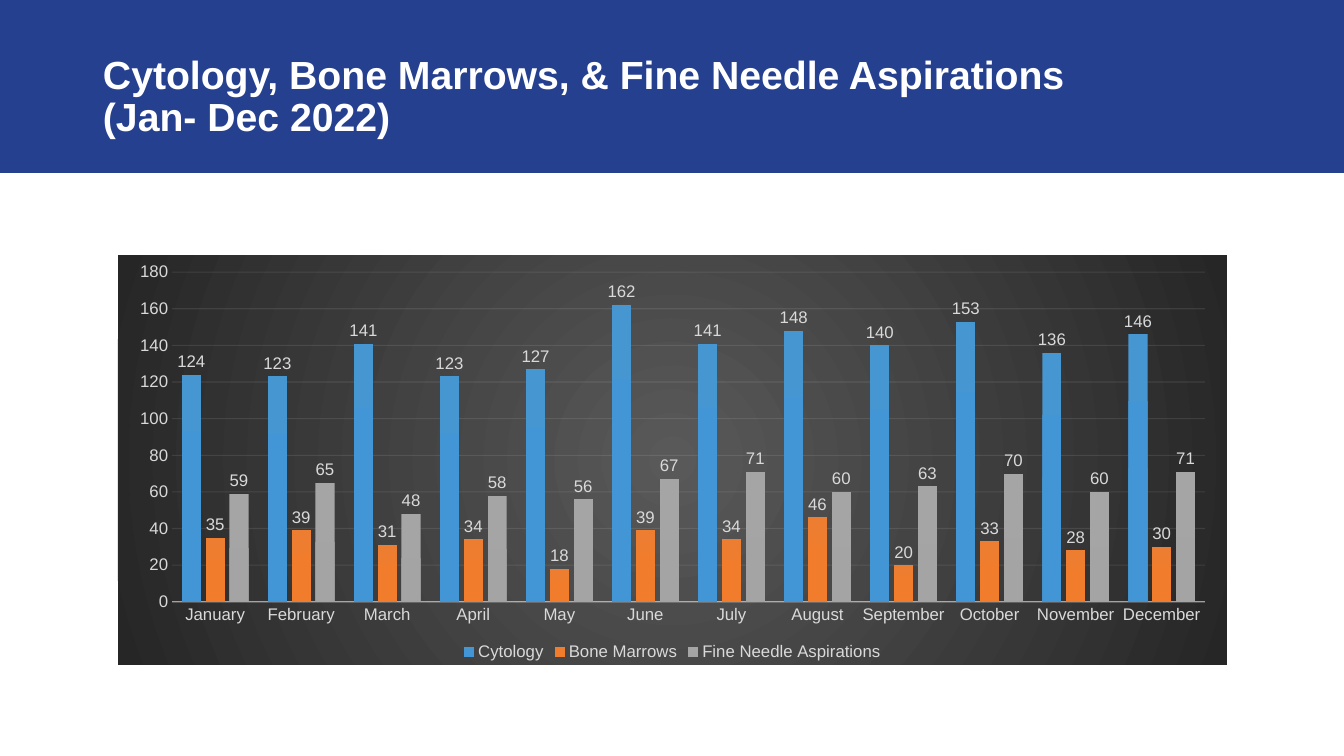
"""Build the 2022 cytology, bone marrow and aspiration volume slide."""
from lxml import etree
from pptx import Presentation
from pptx.chart.data import CategoryChartData
from pptx.dml.color import RGBColor
from pptx.enum.chart import XL_CHART_TYPE, XL_LABEL_POSITION, XL_LEGEND_POSITION, XL_TICK_MARK
from pptx.enum.shapes import MSO_SHAPE
from pptx.enum.text import MSO_ANCHOR, MSO_AUTO_SIZE, PP_ALIGN
from pptx.oxml import parse_xml
from pptx.oxml.ns import nsdecls, qn
from pptx.util import Emu, Pt

COLUMNS = XL_CHART_TYPE.COLUMN_CLUSTERED
OUTSIDE_END = XL_LABEL_POSITION.OUTSIDE_END
BOTTOM = XL_LEGEND_POSITION.BOTTOM
NO_TICK = XL_TICK_MARK.NONE
RECTANGLE = MSO_SHAPE.RECTANGLE
MIDDLE = MSO_ANCHOR.MIDDLE
NO_AUTOFIT = MSO_AUTO_SIZE.NONE
LEFT = PP_ALIGN.LEFT

FONT = "Arial"
WHITE, NAVY, PALE, LABEL = "FFFFFF", "25408F", "F2F2F2", "D9D9D9"
TITLE_LINES = ["Cytology, Bone Marrows, & Fine Needle Aspirations", "(Jan- Dec 2022)"]
MONTHS = ["January", "February", "March", "April", "May", "June", "July",
          "August", "September", "October", "November", "December"]
PROCEDURES = [
    ("Cytology", [124, 123, 141, 123, 127, 162, 141, 148, 140, 153, 136, 146],
     ["4696D2", "4296D5", "4295D4"]),
    ("Bone Marrows", [35, 39, 31, 34, 18, 39, 34, 46, 20, 33, 28, 30],
     ["ED7D31", "F17C2C", "F07B2C"]),
    ("Fine Needle Aspirations", [59, 65, 48, 58, 56, 67, 71, 60, 63, 70, 60, 71],
     ["A5A5A5", "A4A4A4", "A4A4A4"]),
]
BACKDROP = ["595959", "262626"]
DOWNWARD = '<a:lin ang="5400000" scaled="0"/>'
RADIAL = '<a:path path="circle"><a:fillToRect l="50000" t="50000" r="50000" b="50000"/></a:path>'

SLIDE_SIZE = (1344, 756)
BAND_BOX = (0, 0, 1344, 173)
TITLE_BOX = (93, 46, 1159, 146)
TITLE_INSETS = (10, 5, 10, 47)
CHART_BOX = (118, 255, 1109, 410)


def px(*lengths):
    return [Emu(round(length * 914400 / 100.8)) for length in lengths]


def color(value):
    return RGBColor.from_string(value)


def style_font(font, size, value, bold=False):
    font.name, font.size, font.bold = FONT, Pt(size), bold
    font.color.rgb = color(value)


def gradient(stops, direction):
    step = 100000 // (len(stops) - 1)
    marks = "".join(f'<a:gs pos="{i * step}"><a:srgbClr val="{stop}"/></a:gs>'
                    for i, stop in enumerate(stops))
    return parse_xml(f'<a:gradFill {nsdecls("a")} rotWithShape="1">'
                     f'<a:gsLst>{marks}</a:gsLst>{direction}</a:gradFill>')


def style_line(line, width, value, opacity):
    line.width = Pt(width)
    line.color.rgb = color(value)
    tint = line.fill._xPr.find(f".//{qn('a:srgbClr')}")
    etree.SubElement(tint, qn("a:alpha")).set("val", str(opacity * 1000))


def add_band(slide):
    band = slide.shapes.add_shape(RECTANGLE, *px(*BAND_BOX))
    band.shadow.inherit = False
    band.fill.solid()
    band.fill.fore_color.rgb = color(NAVY)
    band.line.fill.background()
    slide.shapes._spTree.insert(2, band._element)


def add_title(slide):
    title = slide.shapes.title
    title.left, title.top, title.width, title.height = px(*TITLE_BOX)
    frame = title.text_frame
    frame.word_wrap, frame.auto_size, frame.vertical_anchor = True, NO_AUTOFIT, MIDDLE
    (frame.margin_left, frame.margin_top,
     frame.margin_right, frame.margin_bottom) = px(*TITLE_INSETS)
    paragraph = frame.paragraphs[0]
    paragraph.alignment, paragraph.line_spacing = LEFT, 0.9
    for index, line in enumerate(TITLE_LINES):
        if index:
            paragraph.add_line_break()
        run = paragraph.add_run()
        run.text = line
        style_font(run.font, 28, WHITE, bold=True)


def add_volume_chart(slide):
    volumes = CategoryChartData()
    volumes.categories = MONTHS
    for name, counts, _ in PROCEDURES:
        volumes.add_series(name, counts)
    chart = slide.shapes.add_chart(COLUMNS, *px(*CHART_BOX), volumes).chart
    style_font(chart.font, 10, "000000")
    chart.has_title = False
    chart.has_legend = True
    chart.legend.position, chart.legend.include_in_layout = BOTTOM, False
    style_font(chart.legend.font, 12, LABEL)

    months, counts = chart.category_axis, chart.value_axis
    for axis in (months, counts):
        axis.major_tick_mark = axis.minor_tick_mark = NO_TICK
        style_font(axis.tick_labels.font, 12, LABEL)
    style_line(months.format.line, 1, PALE, 54)
    counts.format.line.fill.background()
    counts.minimum_scale, counts.maximum_scale, counts.major_unit = 0, 180, 20
    style_line(counts.major_gridlines.format.line, 0.75, PALE, 10)

    plot = chart.plots[0]
    plot.gap_width, plot.overlap, plot.vary_by_categories = 100, -24, False
    for series, (_, _, stops) in zip(plot.series, PROCEDURES):
        series.invert_if_negative = False
        series.format.fill.solid()
        solid = series._element.find(f"{qn('c:spPr')}/{qn('a:solidFill')}")
        solid.getparent().replace(solid, gradient(stops, DOWNWARD))
        labels = series.data_labels
        labels.show_value, labels.position = True, OUTSIDE_END
        style_font(labels.font, 12, LABEL)

    area = parse_xml(f'<c:spPr {nsdecls("c", "a")}><a:ln><a:noFill/></a:ln></c:spPr>')
    area.insert(0, gradient(BACKDROP, RADIAL))
    chart._chartSpace.find(qn("c:chart")).addnext(area)


def main():
    deck = Presentation()
    deck.slide_width, deck.slide_height = px(*SLIDE_SIZE)
    slide = deck.slides.add_slide(deck.slide_layouts[5])
    add_band(slide)
    add_title(slide)
    add_volume_chart(slide)
    deck.save("out.pptx")


if __name__ == "__main__":
    main()
